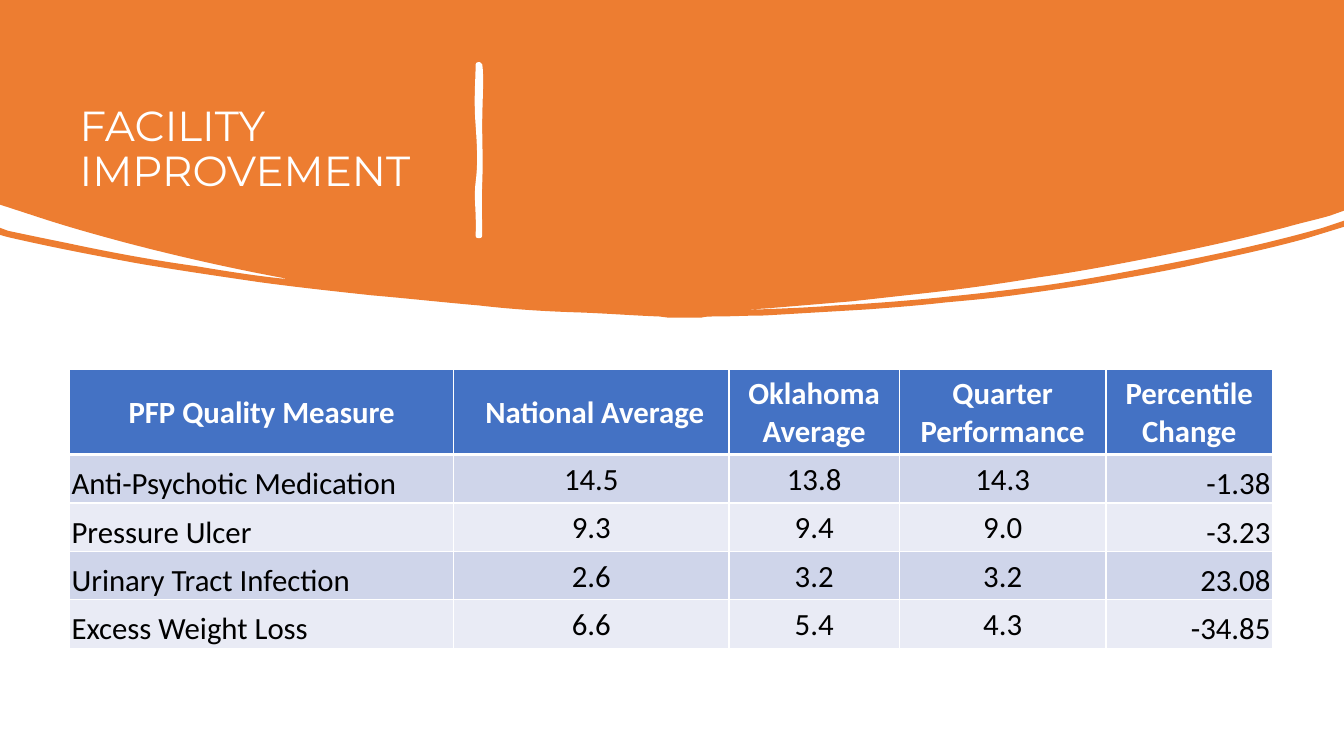
from dataclasses import dataclass

from lxml import etree
from pptx import Presentation
from pptx.dml.color import RGBColor
from pptx.enum.text import MSO_ANCHOR, MSO_AUTO_SIZE, PP_ALIGN
from pptx.oxml.ns import qn
from pptx.shapes.autoshape import Shape
from pptx.slide import Slide
from pptx.table import _Cell
from pptx.util import Pt

EMU_PER_PX = 9144  # 100 px to the inch
TITLE_ONLY_LAYOUT = 5

ORANGE = RGBColor(0xED, 0x7D, 0x31)
WHITE = RGBColor(0xFF, 0xFF, 0xFF)
BLACK = RGBColor(0x00, 0x00, 0x00)
BLUE = RGBColor(0x44, 0x72, 0xC4)
BAND_DARK = RGBColor(0xCF, 0xD5, 0xEA)
BAND_LIGHT = RGBColor(0xE9, 0xEB, 0xF5)

LEFT, CENTER, RIGHT = PP_ALIGN.LEFT, PP_ALIGN.CENTER, PP_ALIGN.RIGHT
MIDDLE, BOTTOM = MSO_ANCHOR.MIDDLE, MSO_ANCHOR.BOTTOM
NO_AUTOFIT = MSO_AUTO_SIZE.NONE


@dataclass(frozen=True)
class Column:
    heading: str
    width: int
    alignment: PP_ALIGN
    anchor: MSO_ANCHOR


@dataclass(frozen=True)
class CellStyle:
    fill: RGBColor
    font_color: RGBColor
    bold: bool
    alignment: PP_ALIGN
    anchor: MSO_ANCHOR


COLUMNS = [
    Column("PFP Quality Measure", 381, LEFT, BOTTOM),
    Column(" National Average", 273, CENTER, MIDDLE),
    Column("Oklahoma Average", 169, CENTER, MIDDLE),
    Column("Quarter Performance", 205, CENTER, MIDDLE),
    Column("Percentile Change", 165, RIGHT, BOTTOM),
]
MEASURES = [
    ("Anti-Psychotic Medication", "14.5", "13.8", "14.3", "-1.38"),
    ("Pressure Ulcer", "9.3", "9.4", "9.0", "-3.23"),
    ("Urinary Tract Infection", "2.6", "3.2", "3.2", "23.08"),
    ("Excess Weight Loss", "6.6", "5.4", "4.3", "-34.85"),
]
HEADER_HEIGHT, ROW_HEIGHT = 85, 48
HEADER_BORDERS = (("a:lnL", 1), ("a:lnR", 1), ("a:lnT", 1), ("a:lnB", 3))

# Two numbers are a straight step, six are a curve: two handles and an end.
BAND_OUTLINE = [
    (0, 0), (1333, 0), (1333, 209), (1319, 214),
    (1305, 218, 1291, 221, 1277, 225), (1232, 237, 1186, 247, 1140, 256),
    (1104, 263, 1067, 270, 1031, 275), (996, 281, 960, 286, 925, 290),
    (898, 293, 871, 296, 844, 299), (760, 306), (743, 307), (744, 307),
    (745, 308, 746, 307, 748, 307), (749, 307, 751, 307, 753, 307),
    (778, 306, 804, 305, 829, 303), (867, 301, 905, 298, 943, 294),
    (974, 291, 1006, 287, 1037, 283), (1079, 277, 1121, 269, 1162, 261),
    (1213, 251, 1263, 240, 1312, 226), (1333, 219), (1333, 225), (1294, 237),
    (1261, 246, 1229, 253, 1196, 260), (1162, 268, 1127, 274, 1092, 280),
    (1063, 285, 1034, 289, 1005, 293), (983, 296, 960, 298, 938, 300),
    (912, 303, 886, 305, 860, 307), (826, 309, 792, 311, 758, 313),
    (742, 313, 725, 314, 708, 314), (704, 314, 700, 314, 696, 315),
    (662, 315), (654, 314), (628, 313, 602, 311, 576, 310),
    (542, 309, 509, 307, 475, 303), (440, 300, 404, 296, 369, 293),
    (332, 289, 295, 285, 258, 280), (217, 274, 176, 268, 135, 261),
    (92, 253, 50, 245, 7, 235), (0, 233), (0, 226), (8, 229),
    (27, 233, 46, 237, 66, 241), (108, 250, 151, 258, 194, 264),
    (224, 269, 255, 274, 286, 277), (285, 278, 284, 276, 282, 276),
    (228, 266, 175, 254, 122, 240), (96, 233, 71, 226, 46, 218), (0, 203),
]
DIVIDER_OUTLINE = [
    (390, 148), (402, 146, 428, 148, 450, 148), (472, 148, 484, 147, 508, 148),
    (533, 149, 539, 148, 560, 148), (560, 150),
    (536, 149, 523, 152, 507, 150), (491, 148, 478, 148, 450, 150),
    (423, 152, 407, 150, 390, 150),
]


def px(length: int) -> int:
    return length * EMU_PER_PX


def add_outline(slide: Slide, steps: list[tuple[int, ...]], color: RGBColor) -> Shape:
    """Build the outline from its end points, then bend the curved steps."""
    ends = [step[-2:] for step in steps]
    builder = slide.shapes.build_freeform(*ends[0], scale=EMU_PER_PX)
    builder.add_line_segments(ends[1:], close=True)
    shape = builder.convert_to_shape()
    left, top = (min(values) for values in zip(*ends))
    for line, step in zip(list(shape.element.iter(qn("a:lnTo"))), steps[1:]):
        if len(step) == 6:
            line.tag = qn("a:cubicBezTo")
            for index, (x, y) in enumerate((step[:2], step[2:4])):
                handle = etree.Element(qn("a:pt"), x=str(x - left), y=str(y - top))
                line.insert(index, handle)
    shape.shadow.inherit = False
    shape.fill.solid()
    shape.fill.fore_color.rgb = color
    shape.line.fill.background()
    return shape


def add_title(slide: Slide, text: str) -> Shape:
    title = slide.shapes.title
    title.left, title.top, title.width, title.height = map(px, (69, 69, 394, 160))
    frame = title.text_frame
    frame.text = text
    frame.word_wrap = True
    frame.auto_size = NO_AUTOFIT
    frame.vertical_anchor = MIDDLE
    paragraph = frame.paragraphs[0]
    paragraph.alignment = LEFT
    paragraph.line_spacing = 0.9
    font = paragraph.runs[0].font
    font.name, font.size = "Montserrat", Pt(30)
    font.color.rgb = WHITE
    return title


def set_header_borders(cell: _Cell) -> None:
    properties = cell._tc.get_or_add_tcPr()
    for index, (tag, points) in enumerate(HEADER_BORDERS):
        line = etree.Element(qn(tag), w=str(Pt(points)))
        fill = etree.SubElement(line, qn("a:solidFill"))
        etree.SubElement(fill, qn("a:srgbClr"), val=str(WHITE))
        properties.insert(index, line)


def write_cell(cell: _Cell, text: str, style: CellStyle) -> None:
    cell.margin_left = cell.margin_right = cell.margin_top = px(2)
    cell.margin_bottom = 0
    cell.vertical_anchor = style.anchor
    cell.fill.solid()
    cell.fill.fore_color.rgb = style.fill
    cell.text_frame.text = text
    paragraph = cell.text_frame.paragraphs[0]
    paragraph.alignment = style.alignment
    font = paragraph.runs[0].font
    font.name, font.size, font.bold = "Calibri", Pt(22), style.bold
    font.color.rgb = style.font_color


def add_measures_table(slide: Slide) -> None:
    width = sum(column.width for column in COLUMNS)
    height = HEADER_HEIGHT + ROW_HEIGHT * len(MEASURES)
    table = slide.shapes.add_table(
        len(MEASURES) + 1, len(COLUMNS), px(69), px(366), px(width), px(height)
    ).table
    for row in table.rows:
        row.height = px(ROW_HEIGHT)
    table.rows[0].height = px(HEADER_HEIGHT)

    header_style = CellStyle(BLUE, WHITE, True, CENTER, MIDDLE)
    for column_index, column in enumerate(COLUMNS):
        table.columns[column_index].width = px(column.width)
        header_cell = table.cell(0, column_index)
        write_cell(header_cell, column.heading, header_style)
        set_header_borders(header_cell)
        for row_index, measure in enumerate(MEASURES, start=1):
            band = BAND_DARK if row_index % 2 else BAND_LIGHT
            style = CellStyle(band, BLACK, False, column.alignment, column.anchor)
            write_cell(table.cell(row_index, column_index), measure[column_index], style)


def main() -> None:
    presentation = Presentation()
    presentation.slide_width, presentation.slide_height = px(1333), px(750)
    slide = presentation.slides.add_slide(presentation.slide_layouts[TITLE_ONLY_LAYOUT])
    title = add_title(slide, "FACILITY IMPROVEMENT")
    header_band = add_outline(slide, BAND_OUTLINE, ORANGE)
    title.element.addprevious(header_band.element)
    divider = add_outline(slide, DIVIDER_OUTLINE, WHITE)
    divider.rotation = 90
    divider.line.color.rgb = WHITE
    divider.line.width = Pt(3.25)
    add_measures_table(slide)
    presentation.save("out.pptx")


if __name__ == "__main__":
    main()
